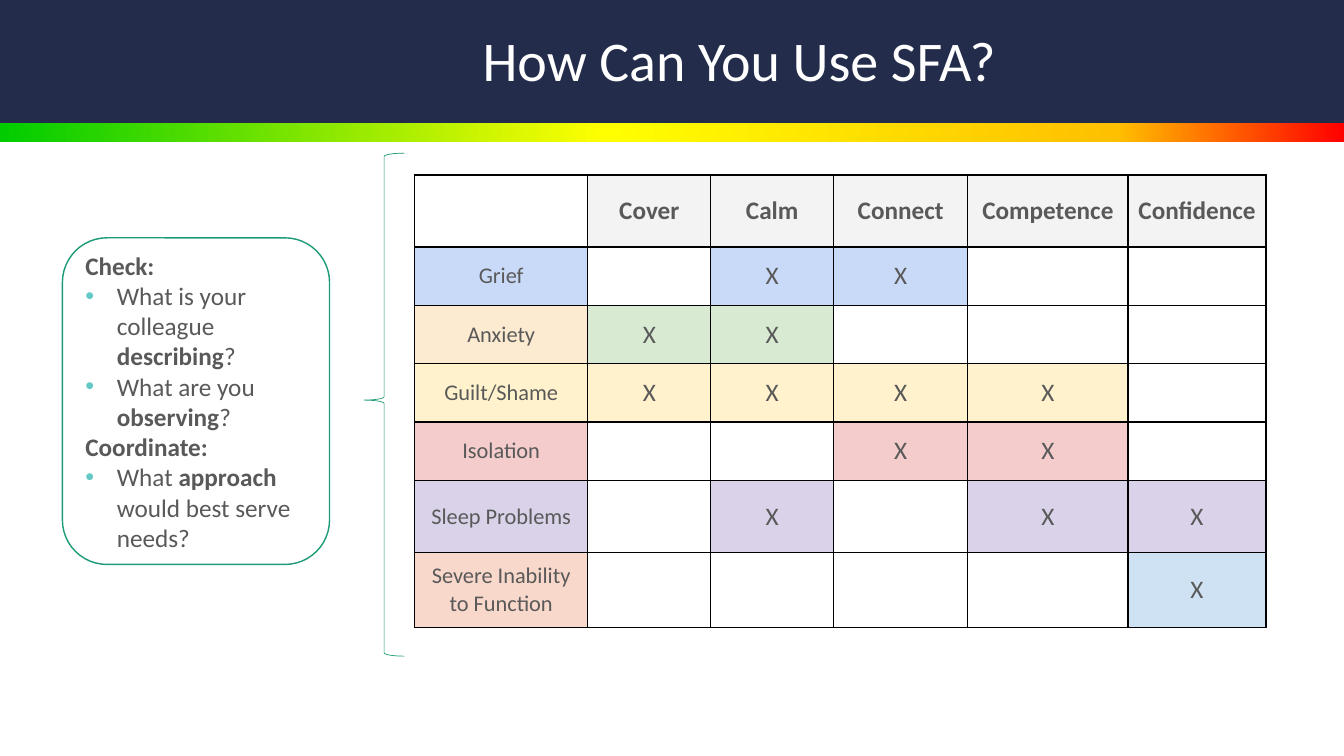
from lxml import etree
from pptx import Presentation
from pptx import util as u
from pptx.dml.color import RGBColor
from pptx.enum import shapes, text
from pptx.oxml import ns

# Content
TITLE = "How Can You Use SFA?"
HEADS = ["", "Cover", "Calm", "Connect", "Competence", "Confidence"]
# label, label fill, mark fill, marked columns
ROWS = [
    ("Grief", "C9DAF8", "C9DAF8", (2, 3)),
    ("Anxiety", "FCEBD1", "D9EAD3", (1, 2)),
    ("Guilt/Shame", "FFF2CC", "FFF2CC", (1, 2, 3, 4)),
    ("Isolation", "F4CCCC", "F4CCCC", (3, 4)),
    ("Sleep Problems", "D9D2E9", "D9D2E9", (2, 4, 5)),
    ("Severe Inability to Function", "F8D8CA", "CFE2F3", (5,)),
]
# bulleted?, runs of (wording, bold)
NOTES = [
    (False, [("Check:", True)]),
    (True, [("What is your colleague ", False), ("describing", True), ("?", False)]),
    (True, [("What are you ", False), ("observing", True), ("?", False)]),
    (False, [("Coordinate:", True)]),
    (True, [("What ", False), ("approach ", True), ("would best serve needs?", False)]),
]
STOPS = [(0, "00CC00"), (45, "FFFF00"), (83, "FFC000"), (100, "FF0000")]
WIDTHS = [123.8, 87.8, 87.8, 95.8, 114.5, 98.6]
HEIGHTS = [51.4] + [41.7] * 4 + [51.4, 53]
WHITE, NAVY, GREEN, GREY = "FFFFFF", "232D4B", "1D9A78", "595959"
SIDES = ("left", "top", "right", "bottom")


def tint(code):
    return RGBColor.from_string(code)


def apply(item, **vals):
    for key, val in vals.items():
        setattr(item, key, val)


def node(root, tag, **vals):
    return etree.SubElement(root, ns.qn("a:" + tag), vals)


def write(par, words, size, bold=False, color=GREY):
    run = par.add_run()
    run.text = words
    apply(run.font, name="Calibri", size=u.Pt(size), bold=bold)
    run.font.color.rgb = tint(color)


def inset(item, *gaps):
    apply(item, **{"margin_" + s: u.Pt(g) for s, g in zip(SIDES, gaps)})


def draw(kind, box, fill=None, line=None, width=1):
    shape = slide.shapes.add_shape(kind, *map(u.Pt, box))
    shape.shadow.inherit = False
    if fill:
        shape.fill.solid()
        shape.fill.fore_color.rgb = tint(fill)
    else:
        shape.fill.background()
    if line:
        shape.line.color.rgb = tint(line)
        shape.line.width = u.Pt(width)
    else:
        shape.line.fill.background()
    return shape


def fill_cell(cell, words, fill, size, bold):
    cell.vertical_anchor = text.MSO_ANCHOR.MIDDLE
    inset(cell, *[7.2] * 4)
    props = cell._tc.get_or_add_tcPr()
    for side in "LRTB":
        edge = node(props, "ln" + side, w=str(u.Pt(1)))
        node(node(edge, "solidFill"), "srgbClr", val="000000")
    cell.fill.solid()
    cell.fill.fore_color.rgb = tint(fill)
    if words:
        par = cell.text_frame.paragraphs[0]
        par.alignment = text.PP_ALIGN.CENTER
        write(par, words, size, bold)


deck = Presentation()
apply(deck, slide_width=u.Pt(960), slide_height=u.Pt(540))
slide = deck.slides.add_slide(deck.slide_layouts[5])
KIND = shapes.MSO_SHAPE

# Header bands
band = draw(KIND.RECTANGLE, (0, 87.8, 960, 13.7), WHITE)
band.fill.gradient()
band.fill.gradient_angle = 0
ramp = band._element.spPr.find(".//" + ns.qn("a:gsLst"))
for old in list(ramp):
    ramp.remove(old)
for pos, code in STOPS:
    node(node(ramp, "gs", pos=str(pos * 1000)), "srgbClr", val=code)
draw(KIND.RECTANGLE, (0, 0, 960, 87.8), NAVY)

# Title, brought in front of the bands
title = slide.shapes.title
apply(title, left=u.Pt(162), top=u.Pt(5.8), width=u.Pt(732), height=u.Pt(79.2))
title.text_frame.vertical_anchor = text.MSO_ANCHOR.MIDDLE
par = title.text_frame.paragraphs[0]
apply(par, alignment=text.PP_ALIGN.CENTER, line_spacing=0.9)
write(par, TITLE, 40, color=WHITE)
slide.shapes._spTree.append(title._element)

# Notes box
box = draw(KIND.ROUNDED_RECTANGLE, (44.6, 169.9, 190.8, 233.3), WHITE, GREEN)
frame = box.text_frame
apply(frame, word_wrap=True, vertical_anchor=text.MSO_ANCHOR.MIDDLE)
inset(frame, 7.2, 3.6, 0, 3.6)
for i, (dot, runs) in enumerate(NOTES):
    par = frame.add_paragraph() if i else frame.paragraphs[0]
    par.alignment = text.PP_ALIGN.LEFT
    if dot:
        props = par._p.get_or_add_pPr()
        props.set("marL", str(u.Pt(22.5)))
        props.set("indent", str(u.Pt(-22.5)))
        node(node(props, "buClr"), "srgbClr", val="64C8C6")
        node(props, "buFont", typeface="Arial")
        node(props, "buChar", char="•")
    for words, bold in runs:
        write(par, words, 18, bold)

# Brace
brace = draw(KIND.LEFT_BRACE, (260, 109.4, 28.8, 359.3), None, GREEN, 0.5)
brace.adjustments[0], brace.adjustments[1] = 0.083, 0.491

# Table
area = (296.1, 125, sum(WIDTHS), sum(HEIGHTS))
grid = slide.shapes.add_table(len(HEIGHTS), len(WIDTHS), *map(u.Pt, area)).table
apply(grid, first_row=False, horz_banding=False)
for col, wide in zip(grid.columns, WIDTHS):
    col.width = u.Pt(wide)
for row, high in zip(grid.rows, HEIGHTS):
    row.height = u.Pt(high)
for c, head in enumerate(HEADS):
    fill_cell(grid.cell(0, c), head, "F3F3F3" if head else WHITE, 18, True)
for r, (label, fill, mark, hits) in enumerate(ROWS, 1):
    fill_cell(grid.cell(r, 0), label, fill, 16, False)
    for c in range(1, len(HEADS)):
        hit = c in hits
        fill_cell(grid.cell(r, c), "X" if hit else "", mark if hit else WHITE, 18, False)

deck.save("out.pptx")
